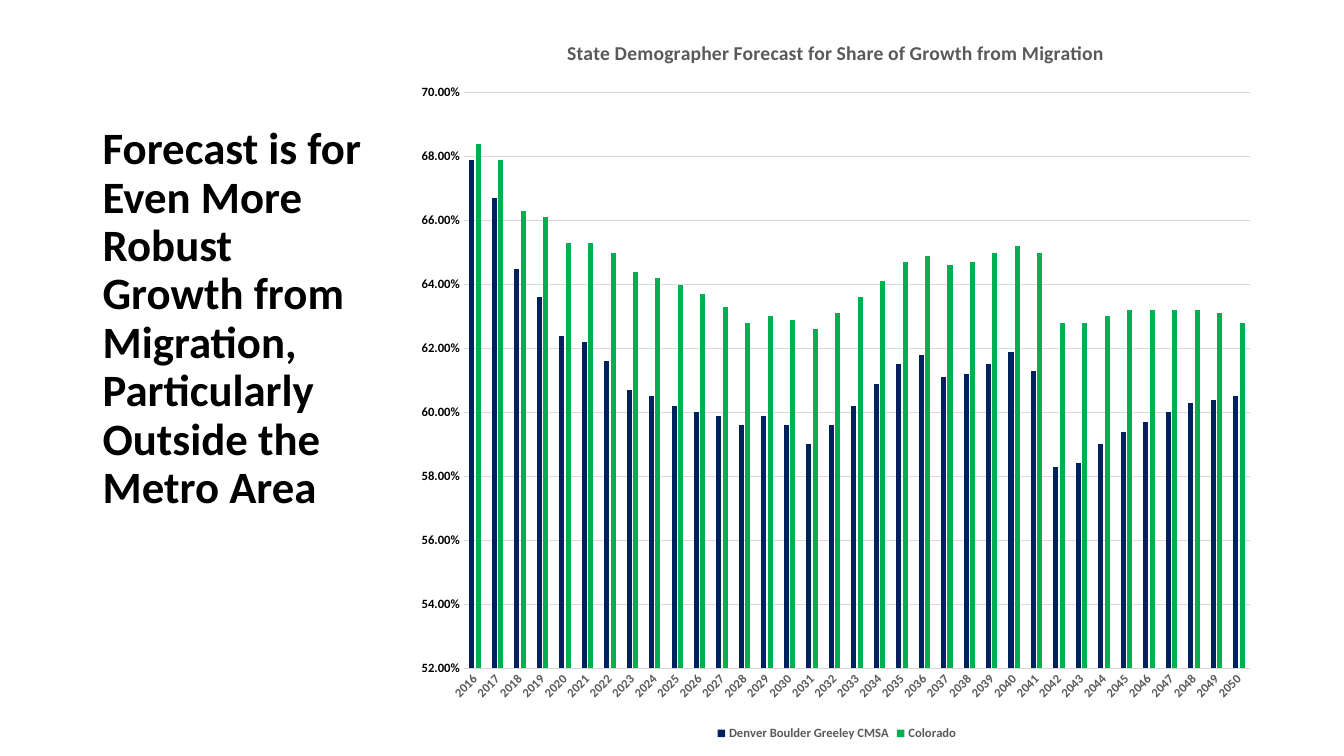
from lxml import etree
from pptx import Presentation
from pptx.chart.data import CategoryChartData
from pptx.dml.color import RGBColor
from pptx.enum.chart import XL_CHART_TYPE, XL_LEGEND_POSITION, XL_TICK_MARK
from pptx.oxml.ns import qn
from pptx.util import Inches, Pt

FONT = "Calibri"
BLACK = RGBColor(0x00, 0x00, 0x00)
GRAY = RGBColor(0x59, 0x59, 0x59)
LIGHT_GRAY = RGBColor(0xD9, 0xD9, 0xD9)
NAVY = RGBColor(0x00, 0x20, 0x60)
GREEN = RGBColor(0x00, 0xB0, 0x50)

MESSAGE = ("Forecast is for Even More Robust Growth from Migration, "
           "Particularly Outside the Metro Area")
CHART_TITLE = "State Demographer Forecast for Share of Growth from Migration"
YEARS = [str(year) for year in range(2016, 2051)]
# Name, colour, share of growth in percent for each year
SERIES = [
    ("Denver Boulder Greeley CMSA", NAVY,
     [67.9, 66.7, 64.5, 63.6, 62.4, 62.2, 61.6, 60.7, 60.5, 60.2, 60.0, 59.9,
      59.6, 59.9, 59.6, 59.0, 59.6, 60.2, 60.9, 61.5, 61.8, 61.1, 61.2, 61.5,
      61.9, 61.3, 58.3, 58.4, 59.0, 59.4, 59.7, 60.0, 60.3, 60.4, 60.5]),
    ("Colorado", GREEN,
     [68.4, 67.9, 66.3, 66.1, 65.3, 65.3, 65.0, 64.4, 64.2, 64.0, 63.7, 63.3,
      62.8, 63.0, 62.9, 62.6, 63.1, 63.6, 64.1, 64.7, 64.9, 64.6, 64.7, 65.0,
      65.2, 65.0, 62.8, 62.8, 63.0, 63.2, 63.2, 63.2, 63.2, 63.1, 62.8]),
]

# Places on the slide in inches: left, top and, except for the title, width, height
MESSAGE_BOX = (0.92, 1.2, 2.8, 5.22)
CHART_BOX = (4.02, 0.16, 8.56, 7.23)
PLOT_BOX = (4.6, 0.92, 7.8, 5.71)
TITLE_AT = (5.59, 0.35)


def style_font(font, size, color):
    font.name = FONT
    font.size = Pt(size)
    font.bold = True
    font.color.rgb = color


def set_layout(parent, index, left, top, *size):
    """Pin a chart part to a place on the slide; c:layout becomes child number index."""
    for old in parent.findall(qn("c:layout")):
        parent.remove(old)
    layout = etree.Element(qn("c:layout"))
    manual = etree.SubElement(layout, qn("c:manualLayout"))
    if size:
        etree.SubElement(manual, qn("c:layoutTarget"), val="inner")
    for mode in ("xMode", "yMode"):
        etree.SubElement(manual, qn(f"c:{mode}"), val="edge")
    chart_left, chart_top, *chart_size = CHART_BOX
    lengths = (left - chart_left, top - chart_top, *size)
    for key, length, whole in zip("xywh", lengths, chart_size * 2):
        etree.SubElement(manual, qn(f"c:{key}"), val=str(length / whole))
    parent.insert(index, layout)


def add_message(slide):
    tf = slide.shapes.add_textbox(*map(Inches, MESSAGE_BOX)).text_frame
    tf.word_wrap = True
    tf.text = MESSAGE
    p = tf.paragraphs[0]
    p.line_spacing = 0.9
    style_font(p.runs[0].font, 32, BLACK)


def add_forecast_chart(slide):
    data = CategoryChartData(number_format="0.00%")
    data.categories = YEARS
    for name, _, shares in SERIES:
        data.add_series(name, [round(share / 100, 3) for share in shares])
    chart = slide.shapes.add_chart(
        XL_CHART_TYPE.COLUMN_CLUSTERED, *map(Inches, CHART_BOX), data).chart
    chart.font.name = FONT
    chart.font.size = Pt(10)
    chart.font.color.rgb = BLACK

    title = chart.chart_title
    title.text_frame.text = CHART_TITLE
    style_font(title.text_frame.paragraphs[0].runs[0].font, 14, GRAY)
    title.include_in_layout = False
    set_layout(title._element, 1, *TITLE_AT)

    plot = chart.plots[0]
    plot.gap_width = 219
    plot.overlap = -27
    plot.vary_by_categories = False
    for series, (_, color, _) in zip(plot.series, SERIES):
        series.format.fill.solid()
        series.format.fill.fore_color.rgb = color
        series.invert_if_negative = False
    set_layout(chart._chartSpace.chart.plotArea, 0, *PLOT_BOX)

    years, shares = chart.category_axis, chart.value_axis
    for axis, color in ((years, GRAY), (shares, BLACK)):
        axis.major_tick_mark = axis.minor_tick_mark = XL_TICK_MARK.NONE
        style_font(axis.tick_labels.font, 9, color)
    years._element.find(qn("c:txPr")).find(qn("a:bodyPr")).set("rot", "-2700000")
    shares.minimum_scale, shares.maximum_scale, shares.major_unit = 0.52, 0.7, 0.02
    shares.tick_labels.number_format = "0.00%"
    shares.tick_labels.number_format_is_linked = False
    shares.format.line.fill.background()
    for line in (years.format.line, shares.major_gridlines.format.line):
        line.color.rgb = LIGHT_GRAY
        line.width = Pt(0.75)

    chart.has_legend = True
    chart.legend.position = XL_LEGEND_POSITION.BOTTOM
    chart.legend.include_in_layout = False
    style_font(chart.legend.font, 9, GRAY)


def main():
    prs = Presentation()
    prs.slide_width, prs.slide_height = Inches(13.33), Inches(7.5)
    slide = prs.slides.add_slide(prs.slide_layouts[6])
    add_message(slide)
    add_forecast_chart(slide)
    prs.save("out.pptx")


if __name__ == "__main__":
    main()
